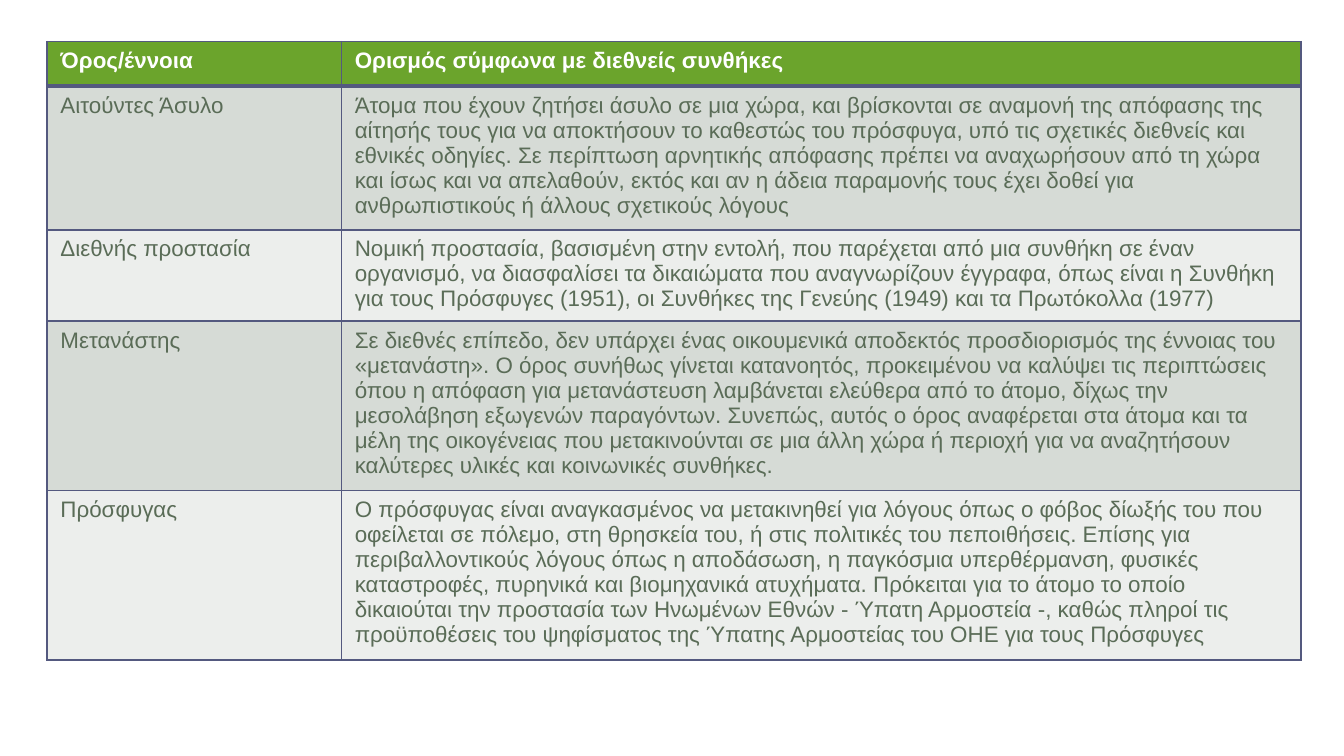
"""Build a slide with a table of migration terms and their definitions."""
from lxml import etree
from pptx import Presentation
from pptx import util as u
from pptx.dml.color import RGBColor
from pptx.oxml.ns import qn

BORDER = "54597F"
COLUMN_WIDTHS = [2.19, 7.14]
ROW_HEIGHTS = [0.33, 1.07, 0.68, 1.26, 1.26]
ROWS = [
    ("Όρος/έννοια", "Ορισμός σύμφωνα με διεθνείς συνθήκες"),
    ("Αιτούντες Άσυλο",
     "Άτομα που έχουν ζητήσει άσυλο σε μια χώρα, και βρίσκονται σε αναμονή της απόφασης της "
     "αίτησής τους για να αποκτήσουν το καθεστώς του πρόσφυγα, υπό τις σχετικές διεθνείς και "
     "εθνικές οδηγίες. Σε περίπτωση αρνητικής απόφασης πρέπει να αναχωρήσουν από τη χώρα "
     "και ίσως και να απελαθούν, εκτός και αν η άδεια παραμονής τους έχει δοθεί για "
     "ανθρωπιστικούς ή άλλους σχετικούς λόγους"),
    ("Διεθνής προστασία",
     "Νομική προστασία, βασισμένη στην εντολή, που παρέχεται από μια συνθήκη σε έναν "
     "οργανισμό, να διασφαλίσει τα δικαιώματα που αναγνωρίζουν έγγραφα, όπως είναι η Συνθήκη "
     "για τους Πρόσφυγες (1951), οι Συνθήκες της Γενεύης (1949) και τα Πρωτόκολλα (1977)"),
    ("Μετανάστης",
     "Σε διεθνές επίπεδο, δεν υπάρχει ένας οικουμενικά αποδεκτός προσδιορισμός της έννοιας του "
     "«μετανάστη». Ο όρος συνήθως γίνεται κατανοητός, προκειμένου να καλύψει τις περιπτώσεις "
     "όπου η απόφαση για μετανάστευση λαμβάνεται ελεύθερα από το άτομο, δίχως την "
     "μεσολάβηση εξωγενών παραγόντων. Συνεπώς, αυτός ο όρος αναφέρεται στα άτομα και τα "
     "μέλη της οικογένειας που μετακινούνται σε μια άλλη χώρα ή περιοχή για να αναζητήσουν "
     "καλύτερες υλικές και κοινωνικές συνθήκες."),
    ("Πρόσφυγας",
     "Ο πρόσφυγας είναι αναγκασμένος να μετακινηθεί για λόγους όπως ο φόβος δίωξής του που "
     "οφείλεται σε πόλεμο, στη θρησκεία του, ή στις πολιτικές του πεποιθήσεις. Επίσης για "
     "περιβαλλοντικούς λόγους όπως η αποδάσωση, η παγκόσμια υπερθέρμανση, φυσικές "
     "καταστροφές, πυρηνικά και βιομηχανικά ατυχήματα. Πρόκειται για το άτομο το οποίο "
     "δικαιούται την προστασία των Ηνωμένων Εθνών - Ύπατη Αρμοστεία -, καθώς πληροί τις "
     "προϋποθέσεις του ψηφίσματος της Ύπατης Αρμοστείας του ΟΗΕ για τους Πρόσφυγες"),
]


def color(value):
    return RGBColor.from_string(value)


def add_border(cell, side, points):
    line = etree.SubElement(cell._tc.get_or_add_tcPr(), qn("a:ln" + side), w=str(u.Pt(points)))
    fill = etree.SubElement(line, qn("a:solidFill"))
    etree.SubElement(fill, qn("a:srgbClr"), val=BORDER)


presentation = Presentation()
presentation.slide_width = u.Inches(10)
presentation.slide_height = presentation.slide_width * 9 // 16
slide = presentation.slides.add_slide(presentation.slide_layouts[6])

table = slide.shapes.add_table(
    len(ROWS), len(COLUMN_WIDTHS), u.Inches(0.35), u.Inches(0.31),
    u.Inches(sum(COLUMN_WIDTHS)), u.Inches(sum(ROW_HEIGHTS))).table
for column, width in zip(table.columns, COLUMN_WIDTHS):
    column.width = u.Inches(width)
for row, height in zip(table.rows, ROW_HEIGHTS):
    row.height = u.Inches(height)

for row_index, row_texts in enumerate(ROWS):
    is_header = row_index == 0
    band = "6BA42C" if is_header else ("ECEEEC", "D6DBD6")[row_index % 2]
    for column_index, cell_text in enumerate(row_texts):
        cell = table.cell(row_index, column_index)
        add_border(cell, "L", 1)
        add_border(cell, "R", 1)
        add_border(cell, "T", 3 if row_index == 1 else 1)
        add_border(cell, "B", 3 if is_header else 1)
        cell.fill.solid()
        cell.fill.fore_color.rgb = color(band)
        run = cell.text_frame.paragraphs[0].add_run()
        run.text = cell_text
        run.font.name = "Arial"
        run.font.size = u.Pt(12)
        run.font.bold = is_header
        run.font.color.rgb = color("FFFFFF" if is_header else "5A6C57")

presentation.save("out.pptx")
